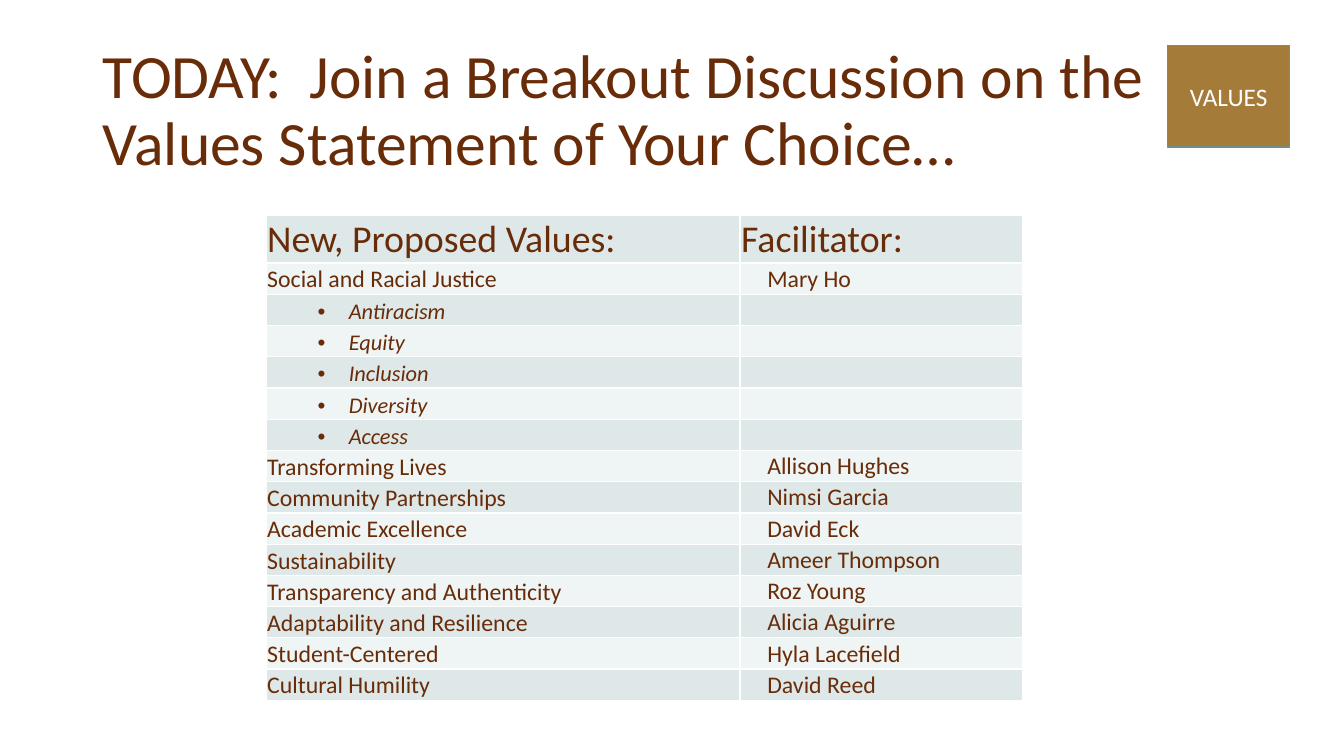
from pptx import Presentation
from pptx.dml.color import RGBColor
from pptx.enum.shapes import MSO_SHAPE
from pptx.enum.text import MSO_ANCHOR as ANC, MSO_AUTO_SIZE, PP_ALIGN
from pptx.oxml.xmlchemy import OxmlElement
from pptx.util import Pt

BROWN, WHITE, GOLD, GRAY = "692C09", "FFFFFF", "A47B38", "738D8C"
BANDS = ["DEE8E8", "EFF4F4"]
ROW_H, HEAD_H = 31, 47
VALUES = [
    ("Social and Racial Justice", "Mary Ho"),
    ("Antiracism", ""),
    ("Equity", ""),
    ("Inclusion", ""),
    ("Diversity", ""),
    ("Access", ""),
    ("Transforming Lives", "Allison Hughes"),
    ("Community Partnerships", "Nimsi Garcia"),
    ("Academic Excellence", "David Eck"),
    ("Sustainability", "Ameer Thompson"),
    ("Transparency and Authenticity", "Roz Young"),
    ("Adaptability and Resilience", "Alicia Aguirre"),
    ("Student-Centered", "Hyla Lacefield"),
    ("Cultural Humility", "David Reed"),
]


def px(n):
    """100 px to the inch."""
    return n * 9144


def rgb(color):
    return RGBColor.from_string(color)


def set_attrs(obj, **values):
    for name, value in values.items():
        setattr(obj, name, value)


def write(p, text, size, color=BROWN, italic=False):
    r = p.add_run()
    r.text = text
    set_attrs(r.font, name="Calibri", size=Pt(size), italic=italic)
    r.font.color.rgb = rgb(color)


def sub(parent, tag, **attrs):
    el = OxmlElement(tag)
    for name, value in attrs.items():
        el.set(name, str(value))
    parent.append(el)
    return el


def add_title(s, x, y, w, h):
    sp = s.shapes.title
    set_attrs(sp, left=px(x), top=px(y), width=px(w), height=px(h))
    tf = sp.text_frame
    set_attrs(tf, word_wrap=True, auto_size=MSO_AUTO_SIZE.NONE, vertical_anchor=ANC.TOP)
    p = tf.paragraphs[0]
    set_attrs(p, alignment=PP_ALIGN.LEFT, line_spacing=0.9)
    write(p, "TODAY:  Join a Breakout Discussion on the Values Statement of Your Choice…", 44)


def add_badge(s, x, y, w, h):
    sp = s.shapes.add_shape(MSO_SHAPE.RECTANGLE, px(x), px(y), px(w), px(h))
    sp.shadow.inherit = False
    sp.fill.solid()
    sp.fill.fore_color.rgb = rgb(GOLD)
    sp.line.color.rgb = rgb(GRAY)
    sp.line.width = Pt(1)
    tf = sp.text_frame
    tf.vertical_anchor = ANC.MIDDLE
    p = tf.paragraphs[0]
    p.alignment = PP_ALIGN.CENTER
    write(p, "VALUES", 18, WHITE)


def style_cell(cell, band, left, anchor):
    set_attrs(cell, margin_left=px(left), margin_top=px(1), margin_right=px(1),
              margin_bottom=0, vertical_anchor=anchor)
    tc_pr = cell._tc.get_or_add_tcPr()
    for side in "LRTB":
        ln = sub(tc_pr, f"a:ln{side}", w=Pt(1))
        sub(sub(ln, "a:solidFill"), "a:srgbClr", val=WHITE)
    cell.fill.solid()
    cell.fill.fore_color.rgb = rgb(band)


def add_bullet(p):
    p.level = 1
    p_pr = p._p.get_or_add_pPr()
    p_pr.set("marL", str(px(81)))
    p_pr.set("indent", str(px(-31)))
    sub(sub(p_pr, "a:buClr"), "a:srgbClr", val=BROWN)
    sub(p_pr, "a:buFont", typeface="Arial")
    sub(p_pr, "a:buChar", char="•")


def add_values_table(s, x, y, w, h):
    rows = [("New, Proposed Values:", "Facilitator:")] + VALUES
    table = s.shapes.add_table(len(rows), 2, px(x), px(y), px(w), px(h)).table
    table.columns[0].width, table.columns[1].width = px(470), px(w - 470)
    for i, row in enumerate(rows):
        head, is_sub = i == 0, not row[1]
        table.rows[i].height = px(HEAD_H if head else ROW_H)
        for j, text in enumerate(row):
            cell = table.cell(i, j)
            style_cell(cell, BANDS[i % 2], 27 if j and not head else 1,
                       ANC.MIDDLE if j or head else ANC.BOTTOM)
            p = cell.text_frame.paragraphs[0]
            if not text:
                p._p.get_or_add_endParaRPr().set("sz", "1600")
                continue
            if is_sub:
                add_bullet(p)
            write(p, text, 27 if head else 16 if is_sub else 17, italic=is_sub)


def main():
    prs = Presentation()
    set_attrs(prs, slide_width=px(1333), slide_height=px(750))
    s = prs.slides.add_slide(prs.slide_layouts[5])
    add_title(s, 92, 40, 1150, 145)
    add_badge(s, 1158, 45, 121, 101)
    add_values_table(s, 264, 214, 750, HEAD_H + ROW_H * len(VALUES))
    prs.save("out.pptx")


if __name__ == "__main__":
    main()
